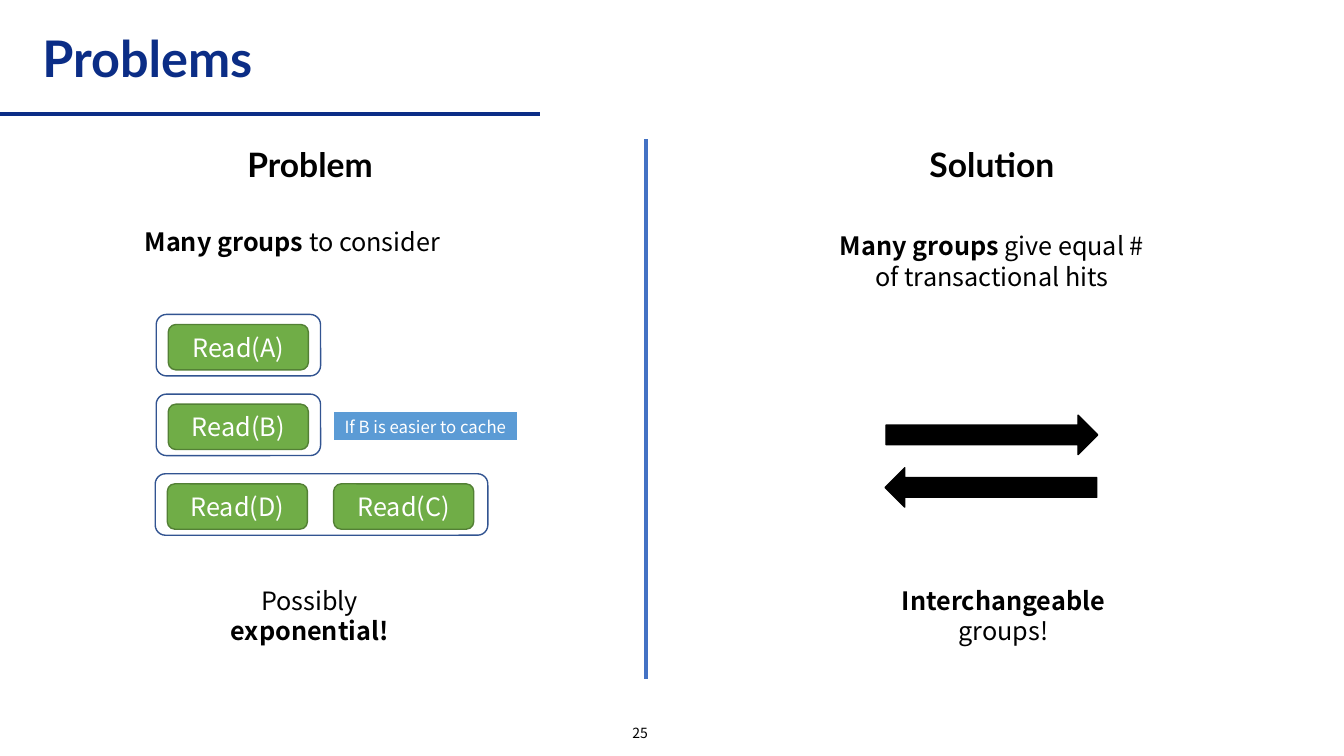
from lxml import etree
from pptx import Presentation
from pptx.dml.color import RGBColor
from pptx.enum.shapes import MSO_CONNECTOR as Conn, MSO_SHAPE as Kind
from pptx.enum.text import MSO_ANCHOR as Anchor, PP_ALIGN as Align
from pptx.oxml.ns import qn
from pptx.util import Pt

NAVY, BLUE, SKY, RING = "0B2D86", "4472C4", "5B9BD5", "325491"
GREEN, MOSS, BLACK, WHITE = "70AD47", "538035", "000000", "FFFFFF"
HEAD, BODY = "Lato", "Noto Sans CJK KR"


def tint(code):
    return RGBColor.from_string(code)


def put(item, form):
    for name, value in form.items():
        setattr(item, name, value)


class Board:
    """Holds the text style and the current slide."""

    def __init__(self, slide):
        self.slide = slide
        self.base = {"name": BODY, "size": Pt(18), "bold": False}

    def fill_text(self, frame, lines, color=BLACK, fit=None,
                  align=Align.CENTER, pitch=None, **form):
        """Each line is a list of (text, bold) parts; lines share a paragraph."""
        put(frame, {"word_wrap": True, **(fit or {})})
        para = frame.paragraphs[0]
        put(para, {"alignment": align, "line_spacing": pitch})
        for num, line in enumerate(lines):
            if num:
                para.add_line_break()
            for text, bold in line:
                run = para.add_run()
                run.text = text
                put(run.font, {**self.base, **form, "bold": bold})
                run.font.color.rgb = tint(color)

    def title(self, text, *box):
        shape = self.slide.shapes.title
        put(shape, dict(zip(("left", "top", "width", "height"), map(Pt, box))))
        self.fill_text(shape.text_frame, [[(text, True)]], NAVY,
                       {"vertical_anchor": Anchor.MIDDLE}, Align.LEFT, 0.9,
                       name=HEAD, size=Pt(36))

    def text(self, lines, *box, **form):
        shape = self.slide.shapes.add_textbox(*map(Pt, box))
        self.fill_text(shape.text_frame, lines, **form)

    def note(self, lines, *box):
        fit = {"word_wrap": False, "margin_top": Pt(5.6)}
        self.text(lines, *box, fit=fit, pitch=Pt(21.6))

    def shape(self, kind, box, fill, edge, width=1, text=None, turn=0, **form):
        shape = self.slide.shapes.add_shape(kind, *map(Pt, box))
        shape.shadow.inherit = False
        shape.rotation = turn
        if fill:
            shape.fill.solid()
            shape.fill.fore_color.rgb = tint(fill)
        else:
            shape.fill.background()
        shape.line.color.rgb = tint(edge)
        shape.line.width = Pt(width)
        if text:
            fit = {"vertical_anchor": Anchor.MIDDLE, "word_wrap": False}
            self.fill_text(shape.text_frame, [[(text, False)]], WHITE, fit,
                           **form)

    def line(self, color, *ends):
        rule = self.slide.shapes.add_connector(Conn.STRAIGHT, *map(Pt, ends))
        rule.line.color.rgb = tint(color)
        rule.line.width = Pt(3)
        etree.SubElement(rule._element.spPr, qn("a:effectLst"))


def main():
    deck = Presentation()
    put(deck, {"slide_width": Pt(960), "slide_height": Pt(540)})
    board = Board(deck.slides.add_slide(deck.slide_layouts[5]))

    # Title, rules and page number
    board.line(NAVY, 0, 81.4, 385.9, 81.4)
    board.title("Problems", 23, 17.3, 660.2, 53.3)
    board.line(BLUE, 461.5, 99.4, 461.5, 485.3)
    board.text([[("25", False)]], 349.2, 511.9, 216, 23, size=Pt(10),
               fit={"vertical_anchor": Anchor.MIDDLE})

    # Column heads
    for text, left, width in (("Problem", 117.4, 208.1),
                              ("Solution", 550.8, 315.4)):
        board.text([[(text, True)]], left, 99.4, width, 31.7,
                   name=HEAD, size=Pt(24))

    # Statements
    board.note([[("Many groups", True), (" to consider", False)]],
               94.3, 156.2, 229, 28.8)
    board.note([[("Possibly", False)], [("exponential!", True)]],
               124.6, 412.6, 193, 50.4)
    board.note([[("Many groups", True), (" give equal #", False)],
                [("of transactional hits", False)]],
               589, 159.1, 239, 51.1)
    board.note([[("Interchangeable", True)], [("groups!", False)]],
               605.5, 412.6, 222.5, 50.4)

    # Groups of reads, one ring per row
    for row, (left, names) in enumerate(((111.6, "A"), (111.6, "B"),
                                         (110.9, "DC"))):
        top = 224.6 + 56.9 * row
        for col, name in enumerate(names):
            board.shape(Kind.ROUNDED_RECTANGLE,
                        (left + 8.6 + 118.8 * col, top + 7.2, 100.1, 32.4),
                        GREEN, MOSS, text=f"Read({name})")
        span = 117.4 + 120.2 * (len(names) - 1)
        board.shape(Kind.ROUNDED_RECTANGLE, (left, top, span, 43.9),
                    None, RING)
    board.shape(Kind.RECTANGLE, (237.6, 293.8, 132.5, 21.6), SKY, WHITE, 1.5,
                "If B is easier to cache", size=Pt(12))

    # Swap arrows
    for left, top, turn in ((632.9, 296.6, 0), (632.2, 334.1, 180)):
        board.shape(Kind.RIGHT_ARROW, (left, top, 151.2, 28.1),
                    BLACK, BLACK, turn=turn)

    deck.save("out.pptx")


if __name__ == "__main__":
    main()
